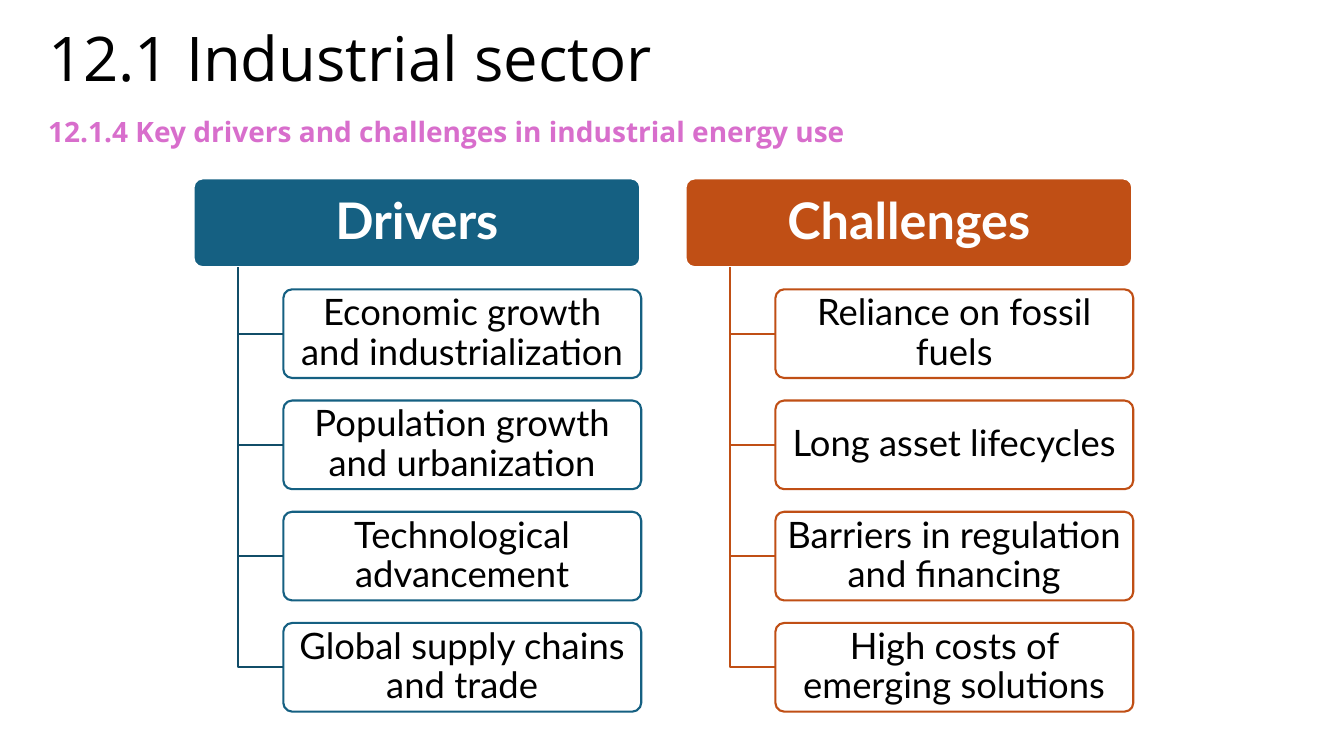
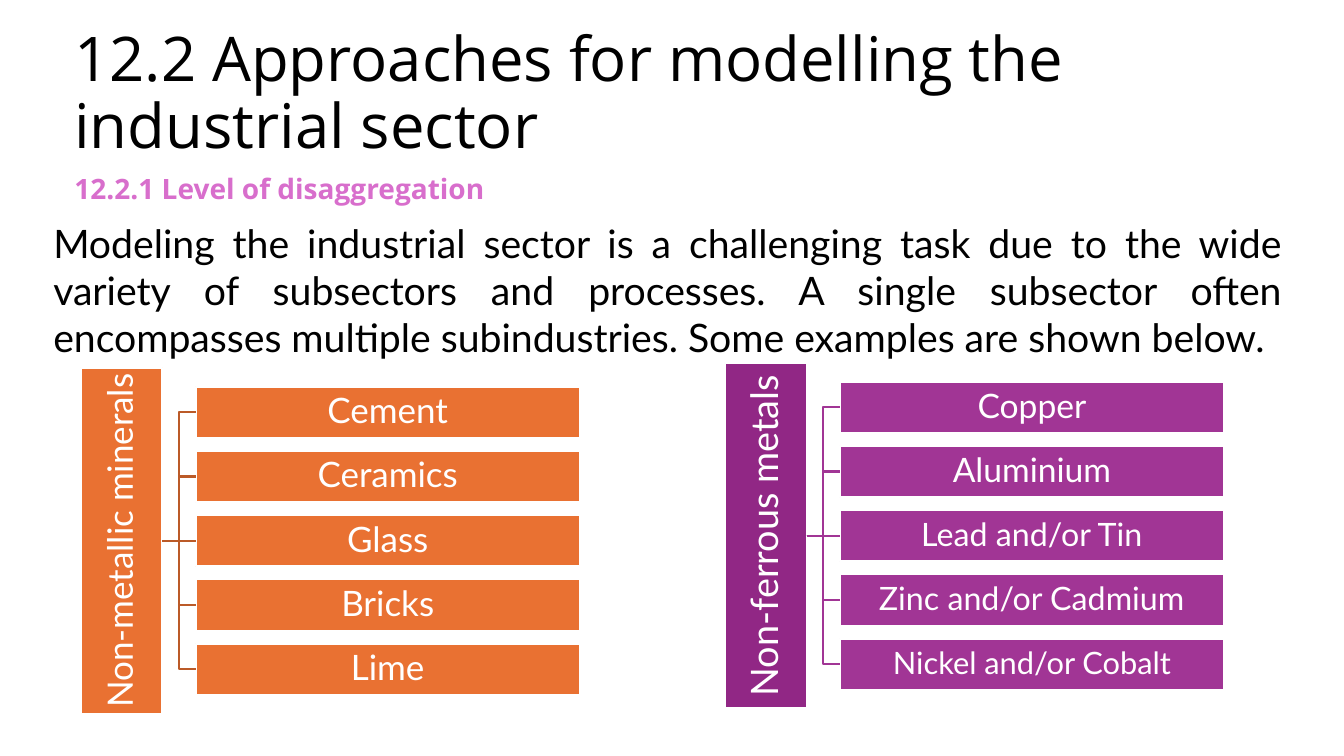
from dataclasses import dataclass

from lxml.etree import SubElement
from pptx import Presentation
from pptx.dml.color import RGBColor
from pptx.enum.shapes import MSO_CONNECTOR as Link, MSO_SHAPE as Preset
from pptx.enum.text import MSO_ANCHOR as Anchor, PP_ALIGN as Align
from pptx.oxml.ns import qn
from pptx.shapes.autoshape import Shape
from pptx.slide import Slide
from pptx.util import Inches, Pt


@dataclass(frozen=True)
class Theme:
    heading_font: str = "Open Sans"
    body_font: str = "Lato"
    black: str = "000000"
    white: str = "FFFFFF"
    pink: str = "D86ECC"
    blue: str = "156082"
    dark_blue: str = "114D68"
    rust: str = "C04F15"
    orange: str = "E97132"
    brown: str = "BB5A28"
    plum: str = "912785"
    purple: str = "A13595"
    title_size: int = 44
    subtitle_size: int = 20
    intro_size: int = 28
    header_size: int = 36
    point_size: int = 26
    line_width: float = 1.5


THEME = Theme()


@dataclass(frozen=True)
class Box:
    left: float
    top: float
    width: float
    height: float


@dataclass(frozen=True)
class TextStyle:
    size: int
    color: str
    font: str = THEME.body_font
    bold: bool = False
    align: Align = Align.CENTER
    anchor: Anchor = Anchor.MIDDLE
    spacing: float = 0.9
    inset_x: float = 0.1
    inset_y: float = 0.05


@dataclass(frozen=True)
class Column:
    """A header with points hanging from a line below it."""
    header: str
    left: float
    color: str
    line_color: str
    points: tuple[str, ...]


@dataclass(frozen=True)
class Subsector:
    """An upright band with its subindustries to the right."""
    name: str
    name_size: int
    left: float
    top: float
    band_color: str
    item_color: str
    line_color: str
    items: tuple[tuple[str, int], ...]


TITLE = TextStyle(THEME.title_size, THEME.black, THEME.heading_font,
                  align=Align.LEFT, anchor=Anchor.BOTTOM)
SUBTITLE = TextStyle(THEME.subtitle_size, THEME.pink, THEME.heading_font, bold=True,
                     align=Align.LEFT, anchor=Anchor.TOP, spacing=1)
INTRO = TextStyle(THEME.intro_size, THEME.black, align=Align.JUSTIFY,
                  anchor=Anchor.TOP, spacing=1)
HEADER = TextStyle(THEME.header_size, THEME.white, bold=True, inset_x=0.07)
POINT = TextStyle(THEME.point_size, THEME.black, inset_x=0.05, inset_y=0.04)

COLUMNS = (
    Column("Drivers", 1.92, THEME.blue, THEME.dark_blue, (
        "Economic growth and industrialization",
        "Population growth and urbanization",
        "Technological advancement",
        "Global supply chains and trade",
    )),
    Column("Challenges", 6.8, THEME.rust, THEME.rust, (
        "Reliance on fossil fuels",
        "Long asset lifecycles",
        "Barriers in regulation and financing",
        "High costs of emerging solutions",
    )),
)

SUBSECTORS = (
    Subsector("Non-metallic minerals", 25, 0.8, 3.65, THEME.orange, THEME.orange, THEME.brown, (
        ("Cement", 25), ("Ceramics", 25), ("Glass", 25), ("Bricks", 25), ("Lime", 25),
    )),
    Subsector("Non-ferrous metals", 27, 7.19, 3.6, THEME.plum, THEME.purple, THEME.purple, (
        ("Copper", 24), ("Aluminium", 24), ("Lead and/or Tin", 23),
        ("Zinc and/or Cadmium", 23), ("Nickel and/or Cobalt", 22),
    )),
)


def rgb(color: str) -> RGBColor:
    return RGBColor.from_string(color)


def lengths(box: Box) -> tuple[Inches, ...]:
    return tuple(Inches(value) for value in (box.left, box.top, box.width, box.height))


def write(shape: Shape, text: str, style: TextStyle) -> None:
    frame = shape.text_frame
    frame.text = text
    frame.word_wrap = True
    frame.vertical_anchor = style.anchor
    frame.margin_left = frame.margin_right = Inches(style.inset_x)
    frame.margin_top = frame.margin_bottom = Inches(style.inset_y)
    paragraph = frame.paragraphs[0]
    paragraph.alignment = style.align
    paragraph.line_spacing = style.spacing
    font = paragraph.runs[0].font
    font.name, font.size, font.bold = style.font, Pt(style.size), style.bold
    font.color.rgb = rgb(style.color)


def add_text(slide: Slide, box: Box, text: str, style: TextStyle) -> None:
    write(slide.shapes.add_textbox(*lengths(box)), text, style)


def add_block(slide: Slide, preset: Preset, box: Box, fill: str, outline: str,
              text: str, style: TextStyle) -> Shape:
    block = slide.shapes.add_shape(preset, *lengths(box))
    if preset == Preset.ROUNDED_RECTANGLE:
        block.adjustments[0] = 0.1
    block.shadow.inherit = False
    block.fill.solid()
    block.fill.fore_color.rgb = rgb(fill)
    block.line.color.rgb = rgb(outline)
    block.line.width = Pt(THEME.line_width)
    write(block, text, style)
    return block


def add_hanger(slide: Slide, color: str, header: Shape, point: Shape) -> None:
    """Draw an open corner from the header's lower edge to the point's left side."""
    x, y = header.left + Inches(0.44), header.top + header.height
    middle = point.top + point.height // 2
    builder = slide.shapes.build_freeform(x, y)
    builder.add_line_segments([(x, middle), (point.left, middle)], close=False)
    hanger = builder.convert_to_shape()
    hanger.shadow.inherit = False
    hanger.fill.background()
    hanger.line.color.rgb = rgb(color)
    hanger.line.width = Pt(THEME.line_width)


def add_link(slide: Slide, color: str, kind: Link, band: Shape, item: Shape) -> None:
    link = slide.shapes.add_connector(kind, 0, 0, 0, 0)
    link.begin_connect(band, 3)
    link.end_connect(item, 1)
    link.line.color.rgb = rgb(color)
    link.line.width = Pt(THEME.line_width)
    SubElement(link._element.spPr, qn("a:effectLst"))


def add_column(slide: Slide, column: Column) -> None:
    height, first_top, last_top = 0.88, 2.87, 6.18
    pitch = (last_top - first_top) / (len(column.points) - 1)
    header = add_block(slide, Preset.ROUNDED_RECTANGLE, Box(column.left, 1.77, 4.43, height),
                       column.color, THEME.white, column.header, HEADER)
    for row, text in enumerate(column.points):
        point = add_block(slide, Preset.ROUNDED_RECTANGLE,
                          Box(column.left + 0.89, first_top + pitch * row, 3.55, height),
                          THEME.white, column.color, text, POINT)
        add_hanger(slide, column.line_color, header, point)


def add_subsector(slide: Slide, subsector: Subsector) -> None:
    band_width, band_height, item_height = 0.81, 3.43, 0.51
    pitch = 1.25 * item_height
    middle_row = len(subsector.items) // 2
    middle_top = subsector.top + (band_height - item_height) / 2

    def label(size: int) -> TextStyle:
        return TextStyle(size, THEME.white, inset_x=0.02, inset_y=0.02)

    band = add_block(slide, Preset.RECTANGLE,
                     Box(subsector.left, subsector.top, band_width, band_height),
                     subsector.band_color, THEME.white, subsector.name,
                     label(subsector.name_size))
    band.text_frame._txBody.bodyPr.set("vert", "vert270")
    for row, (text, size) in enumerate(subsector.items):
        item = add_block(slide, Preset.RECTANGLE,
                         Box(subsector.left + 1.14, middle_top + pitch * (row - middle_row),
                             3.81, item_height),
                         subsector.item_color, THEME.white, text, label(size))
        kind = Link.STRAIGHT if row == middle_row else Link.ELBOW
        add_link(slide, subsector.line_color, kind, band, item)


def add_titled_slide(deck: Presentation, title: str, title_box: Box,
                     subtitle: str, subtitle_box: Box) -> Slide:
    slide = deck.slides.add_slide(deck.slide_layouts[6])
    add_text(slide, title_box, title, TITLE)
    add_text(slide, subtitle_box, subtitle, SUBTITLE)
    return slide


def main() -> None:
    deck = Presentation()
    deck.slide_width, deck.slide_height = Inches(13.33), Inches(7.5)

    drivers = add_titled_slide(
        deck, "12.1 Industrial sector", Box(0.38, 0.16, 11.78, 0.83),
        "12.1.4 Key drivers and challenges in industrial energy use",
        Box(0.38, 1.09, 11.34, 0.44))
    for column in COLUMNS:
        add_column(drivers, column)

    approaches = add_titled_slide(
        deck, "12.2 Approaches for modelling the industrial sector",
        Box(0.64, 0.12, 11.33, 1.53),
        "12.2.1 Level of disaggregation", Box(0.64, 1.65, 6.8, 0.44))
    add_text(approaches, Box(0.43, 2.13, 12.38, 1.51),
             "Modeling the industrial sector is a challenging task due to the wide variety of "
             "subsectors and processes. A single subsector often encompasses multiple "
             "subindustries. Some examples are shown below.", INTRO)
    for subsector in SUBSECTORS:
        add_subsector(approaches, subsector)

    deck.save("out.pptx")


if __name__ == "__main__":
    main()
